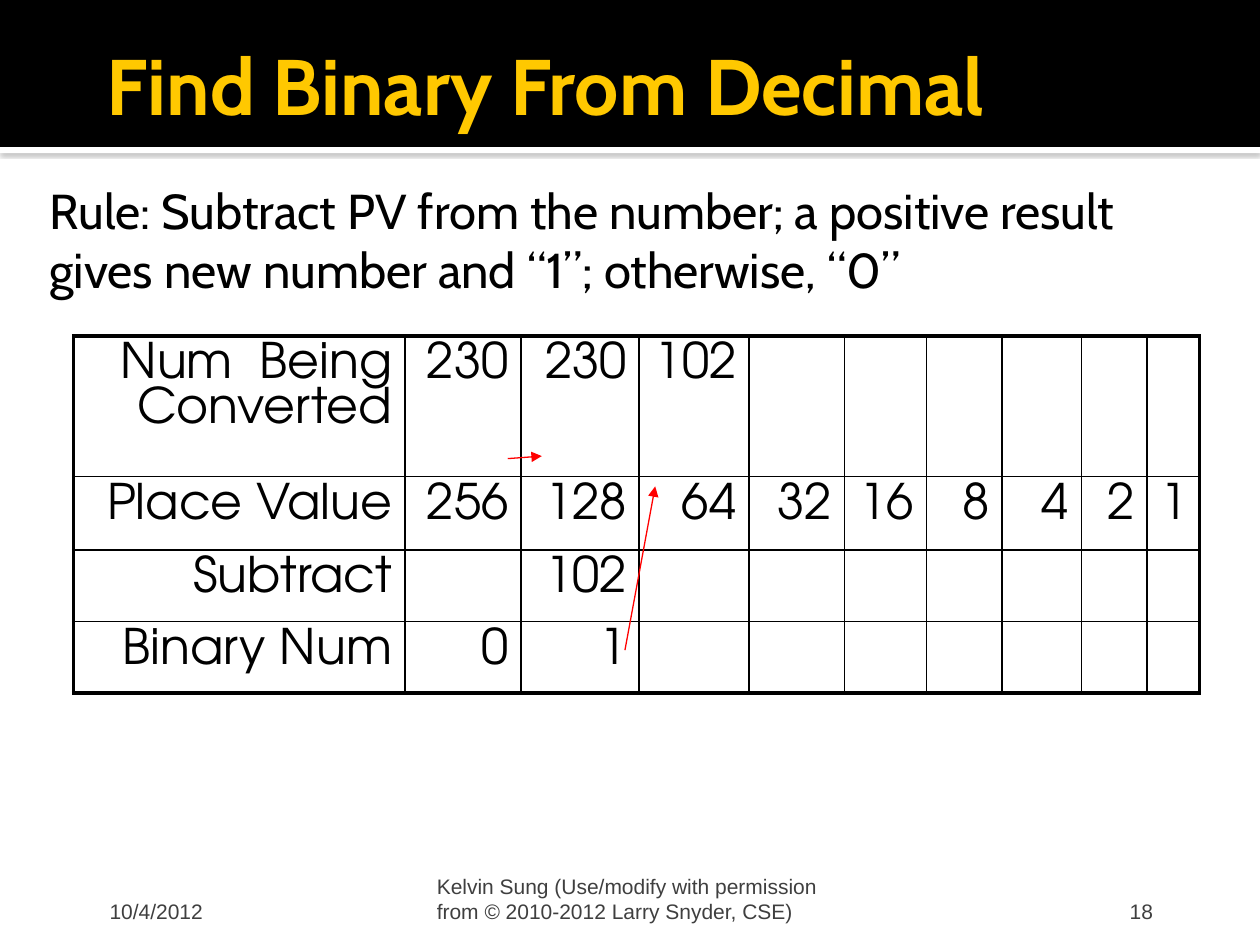
from lxml import etree
from pptx import Presentation
from pptx.dml.color import RGBColor
from pptx.enum.shapes import MSO_CONNECTOR as CONNECTOR, MSO_SHAPE as SHAPE
from pptx.enum.text import MSO_ANCHOR as ANCHOR, PP_ALIGN as ALIGN
from pptx.oxml import parse_xml
from pptx.oxml.ns import nsdecls, qn
from pptx.util import Inches, Pt

COLORS = {"black": "000000", "white": "FFFFFF", "title": "FFC800",
          "footer": "3F3F3F", "arrow": "FF0000", "shadow": "808080"}

presentation = Presentation()
presentation.slide_width, presentation.slide_height = Inches(10), Inches(7.5)
slide = presentation.slides.add_slide(presentation.slide_layouts[6])


def grid(*cells):
    """Lengths on a grid of 120 columns by 90 rows."""
    return [round(presentation.slide_width / 120 * cell) for cell in cells]


def write(frame, text, size=28, font="Cabin", color="black", bold=False,
          align=ALIGN.LEFT, anchor=ANCHOR.TOP, insets=(0.1, 0.05, 0.1, 0.05)):
    frame.word_wrap = True
    frame.vertical_anchor = anchor
    (frame.margin_left, frame.margin_top,
     frame.margin_right, frame.margin_bottom) = map(Inches, insets)
    paragraph = frame.paragraphs[0]
    paragraph.alignment = align
    run = paragraph.add_run()
    run.text = text
    run.font.size, run.font.name, run.font.bold = Pt(size), font, bold
    run.font.color.rgb = RGBColor.from_string(COLORS[color])


# Header band with a white rule below it
for top, height, color in [(14, 0.6, "white"), (0, 14, "black")]:
    band = slide.shapes.add_shape(SHAPE.RECTANGLE, *grid(0, top, 120, height))
    band.fill.solid()
    band.fill.fore_color.rgb = RGBColor.from_string(COLORS[color])
    band.line.fill.background()
    band.shadow.inherit = False
    if color == "white":
        band._element.spPr.find(qn("a:effectLst")).append(parse_xml(
            f'<a:outerShdw {nsdecls("a")} blurRad="{Pt(2.5)}" dist="{Pt(0.8)}" '
            f'dir="5400000"><a:srgbClr val="{COLORS["shadow"]}">'
            '<a:alpha val="60000"/></a:srgbClr></a:outerShdw>'))

# Title, rule and footers
footer = dict(size=12, font="Arial", color="footer", anchor=ANCHOR.BOTTOM)
texts = [
    ((9, 2, 102, 12), "Find Binary From Decimal",
     dict(size=45, color="title", bold=True, anchor=ANCHOR.MIDDLE,
          insets=(0.1, 0.05, 0.05, 0.05))),
    ((4, 16, 112, 54),
     "Rule: Subtract PV from the number; a positive result gives new number "
     "and “1”; otherwise, “0”", dict(insets=(0.06, 0.1, 0.1, 0.05))),
    ((9, 82, 25, 6), "10/4/2012", dict(footer, insets=(0.12, 0.05, 0.05, 0))),
    ((41, 82, 38, 6),
     "Kelvin Sung (Use/modify with permission from © 2010-2012 Larry Snyder, CSE)",
     dict(footer, insets=(0.05, 0.05, 0.05, 0))),
    ((86, 82, 25, 6), "18",
     dict(footer, align=ALIGN.RIGHT, insets=(0.1, 0.05, 0.1, 0))),
]
for box, text, style in texts:
    write(slide.shapes.add_textbox(*grid(*box)).text_frame, text, **style)

# Conversion table
rows = [
    ["Num  Being Converted", "230", "230", "102"],
    ["Place Value"] + [str(2 ** power) for power in range(8, -1, -1)],
    ["Subtract", "", "102"],
    ["Binary Num", "0", "1"],
]
column_widths = [31.56, 11.04, 11.28, 10.44, 9.12, 7.8, 7.2, 7.56, 6.24, 5.04]
row_heights = [13.4, 7, 6.7, 6.8]
last_row, last_column = len(row_heights) - 1, len(column_widths) - 1
table_frame = slide.shapes.add_table(
    len(row_heights), len(column_widths),
    *grid(7, 32, sum(column_widths), sum(row_heights)))
table = table_frame.table
table.first_row = table.horz_banding = False
for column, width in zip(table.columns, grid(*column_widths)):
    column.width = width
for row, height in zip(table.rows, grid(*row_heights)):
    row.height = height

for r, texts_in_row in enumerate(rows):
    for c in range(len(column_widths)):
        cell = table.cell(r, c)
        if c < len(texts_in_row) and texts_in_row[c]:
            write(cell.text_frame, texts_in_row[c], font="TeX Gyre Adventor",
                  align=ALIGN.RIGHT)
        # Heavy lines on the outside, thin lines within
        outside = {"lnL": c == 0, "lnR": c == last_column,
                   "lnT": r == 0, "lnB": r == last_row}
        properties = cell._tc.get_or_add_tcPr()
        for side, heavy in outside.items():
            properties.append(parse_xml(
                f'<a:{side} {nsdecls("a")} w="{Pt(2.25 if heavy else 1)}">'
                f'<a:solidFill><a:srgbClr val="{COLORS["black"]}"/></a:solidFill>'
                f'</a:{side}>'))
        cell.fill.background()

# Arrows that carry a number to the next column
for ends in [(48.36, 43.68, 51.6, 43.44), (59.52, 61.92, 62.4, 46.32)]:
    arrow = slide.shapes.add_connector(CONNECTOR.STRAIGHT, *grid(*ends))
    arrow.line.width = Pt(0.75)
    arrow.line.color.rgb = RGBColor.from_string(COLORS["arrow"])
    etree.SubElement(arrow.line._get_or_add_ln(), qn("a:tailEnd"), type="triangle")
    etree.SubElement(arrow._element.spPr, qn("a:effectLst"))

presentation.save("out.pptx")
